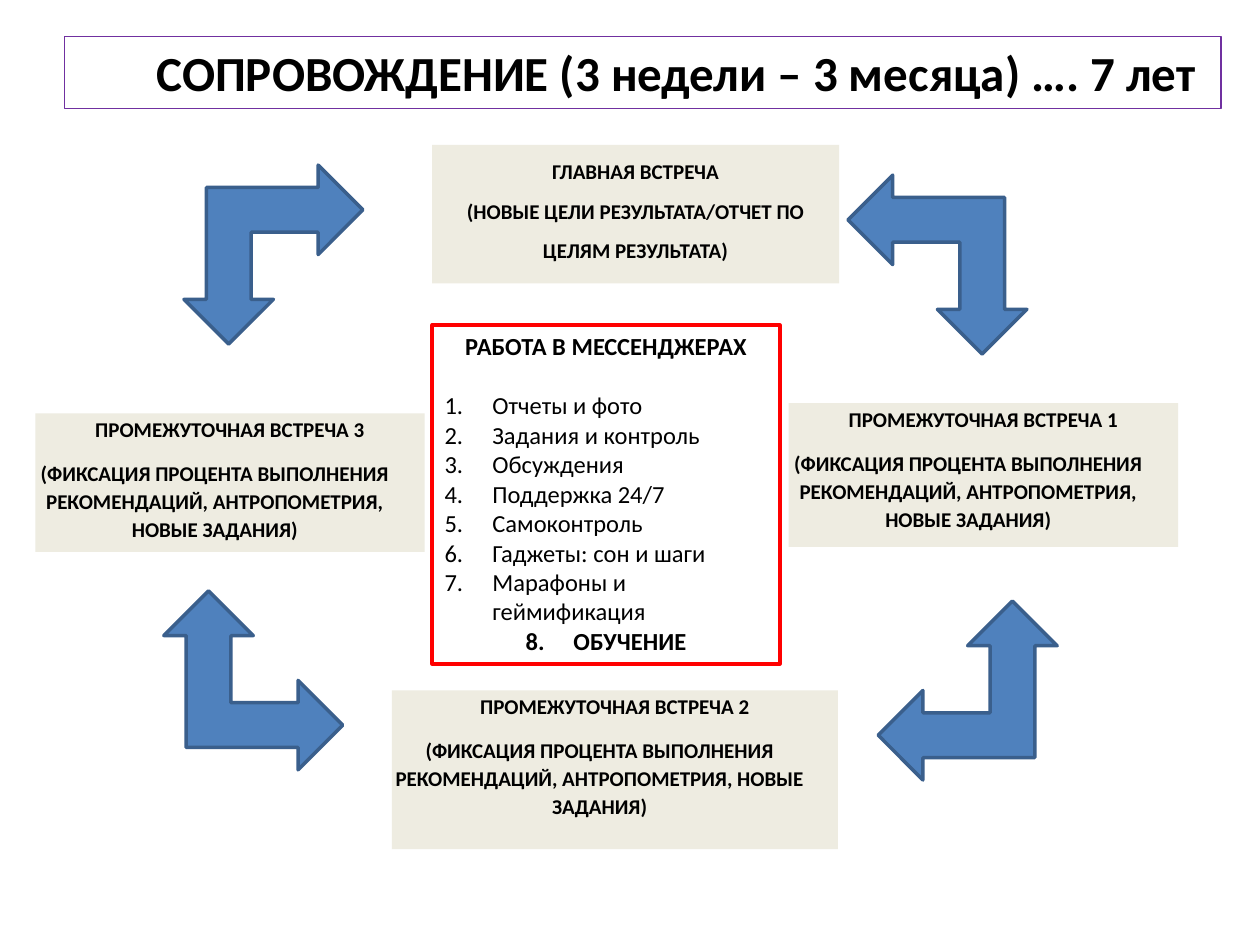
from dataclasses import dataclass

import pptx
import pptx.dml.color
import pptx.enum.shapes
import pptx.enum.text
import pptx.oxml.ns
import pptx.util
from lxml import etree

WIDTH, HEIGHT = pptx.util.Inches(10), pptx.util.Inches(7.5)
FONT = "Calibri"
COLORS = {
    "text": "000000",
    "frame": "7030A0",
    "card": "EEECE1",
    "arrow": "4F81BD",
    "edge": "3A5F8C",
    "alert": "FF0000",
}
ALIGN = pptx.enum.text.PP_ALIGN
KIND = pptx.enum.shapes.MSO_SHAPE


@dataclass
class Box:
    """Left, top, width and height in percent of the slide."""
    left: float
    top: float
    width: float
    height: float

    def place(self) -> tuple[int, int, int, int]:
        return (int(WIDTH * self.left / 100), int(HEIGHT * self.top / 100),
                int(WIDTH * self.width / 100), int(HEIGHT * self.height / 100))


@dataclass
class Card:
    box: Box
    head: str
    body: str
    spacing: float = 1.12
    gap: float = 9.1
    shift: float = 0.24  # right indent of the body, inches


@dataclass
class Arrow:
    left: float
    top: float
    turn: int


TASK = "(ФИКСАЦИЯ ПРОЦЕНТА ВЫПОЛНЕНИЯ РЕКОМЕНДАЦИЙ, АНТРОПОМЕТРИЯ, НОВЫЕ ЗАДАНИЯ)"
STEP = "ПРОМЕЖУТОЧНАЯ ВСТРЕЧА"
TITLE = "СОПРОВОЖДЕНИЕ (3 недели – 3 месяца) …. 7 лет"
TITLE_BOX = Box(5.1, 3.87, 91.8, 7.6)
CARDS = [
    Card(Box(34.3, 15.33, 32.3, 14.67), "ГЛАВНАЯ ВСТРЕЧА",
         "(НОВЫЕ ЦЕЛИ РЕЗУЛЬТАТА/ОТЧЕТ ПО ЦЕЛЯМ РЕЗУЛЬТАТА)", 1.56, 0, 0),
    Card(Box(62.6, 42.67, 30.9, 15.2), f"{STEP} 1", TASK),
    Card(Box(31.1, 73.07, 35.4, 16.8), f"{STEP} 2", TASK),
    Card(Box(2.8, 43.73, 30.9, 14.67), f"{STEP} 3", TASK),
]
ARROWS = [
    Arrow(67.3, 18.53, 270),
    Arrow(69.7, 63.6, 0),
    Arrow(13, 62.53, 90),
    Arrow(14.6, 17.47, 180),
]
ARROW_SIZE = 14.2
CHAT_BOX = Box(34.3, 34.4, 27.6, 35.87)
CHAT_HEAD = "РАБОТА В МЕССЕНДЖЕРАХ"
CHAT_ITEMS = ["Отчеты и фото", "Задания и контроль", "Обсуждения", "Поддержка 24/7",
              "Самоконтроль", "Гаджеты: сон и шаги", "Марафоны и геймификация"]
CHAT_LAST = "ОБУЧЕНИЕ"


def color(name: str) -> pptx.dml.color.RGBColor:
    return pptx.dml.color.RGBColor.from_string(COLORS[name])


def add_run(par, text: str, size: float, bold: bool = True) -> None:
    run = par.add_run()
    run.text = text
    font = run.font
    font.name, font.size, font.bold = FONT, pptx.util.Pt(size), bold
    font.color.rgb = color("text")


def set_line(shape, name: str, width: float) -> None:
    shape.line.color.rgb = color(name)
    shape.line.width = pptx.util.Pt(width)


def add_shape(slide, kind, box: Box, fill: str | None = None):
    shape = slide.shapes.add_shape(kind, *box.place())
    shape.shadow.inherit = False
    if fill:
        shape.fill.solid()
        shape.fill.fore_color.rgb = color(fill)
    else:
        shape.fill.background()
    return shape


def set_frame(shape, inset: float | None = None):
    frame = shape.text_frame
    frame.word_wrap = True
    frame.vertical_anchor = pptx.enum.text.MSO_ANCHOR.TOP
    if inset is not None:
        frame.margin_left = frame.margin_right = pptx.util.Inches(inset)
        frame.margin_top = frame.margin_bottom = pptx.util.Inches(inset)
    return frame


def set_indent(par, **sides: float) -> None:
    """Set marL, marR or indent of a paragraph, in inches."""
    props = par._p.get_or_add_pPr()
    for side, inches in sides.items():
        props.set(side, str(int(pptx.util.Inches(inches))))


def draw_title(slide) -> None:
    title = slide.shapes.title
    title.left, title.top, title.width, title.height = TITLE_BOX.place()
    set_line(title, "frame", 0.75)
    frame = set_frame(title, 0.05)
    frame.auto_size = pptx.enum.text.MSO_AUTO_SIZE.NONE
    frame.margin_left, frame.margin_right = pptx.util.Inches(0.73), 0
    par = frame.paragraphs[0]
    par.alignment = ALIGN.LEFT
    add_run(par, TITLE, 28)


def draw_card(slide, card: Card) -> None:
    shape = add_shape(slide, KIND.RECTANGLE, card.box, "card")
    shape.line.fill.background()
    frame = set_frame(shape, 0)
    head, body = frame.paragraphs[0], frame.add_paragraph()
    for par, text in ((head, card.head), (body, card.body)):
        par.alignment = ALIGN.CENTER
        par.line_spacing = card.spacing
        add_run(par, text, 12)
    head.space_after = pptx.util.Pt(card.gap)
    set_indent(body, marR=card.shift)


def draw_arrow(slide, arrow: Arrow) -> None:
    box = Box(arrow.left, arrow.top, ARROW_SIZE, ARROW_SIZE * WIDTH / HEIGHT)
    shape = add_shape(slide, KIND.LEFT_UP_ARROW, box, "arrow")
    set_line(shape, "edge", 2)
    shape.rotation = arrow.turn


def add_item(frame, text: str, last: bool = False):
    par = frame.add_paragraph()
    par.alignment = ALIGN.CENTER if last else ALIGN.LEFT
    set_indent(par, marL=0.38, indent=-0.38)
    etree.SubElement(par._p.get_or_add_pPr(), pptx.oxml.ns.qn("a:buAutoNum"),
                     type="arabicPeriod")
    add_run(par, text, 14, last)
    return par


def draw_chat(slide) -> None:
    shape = add_shape(slide, KIND.RECTANGLE, CHAT_BOX)
    set_line(shape, "alert", 2)
    frame = set_frame(shape)
    head = frame.paragraphs[0]
    head.alignment = ALIGN.CENTER
    add_run(head, CHAT_HEAD, 14)
    head.space_after = pptx.util.Pt(17)
    for text in CHAT_ITEMS:
        add_item(frame, text)
    add_item(frame, CHAT_LAST, last=True)


def main() -> None:
    deck = pptx.Presentation()
    deck.slide_width, deck.slide_height = WIDTH, HEIGHT
    slide = deck.slides.add_slide(deck.slide_layouts[5])
    draw_title(slide)
    for card in CARDS:
        draw_card(slide, card)
    for arrow in ARROWS:
        draw_arrow(slide, arrow)
    draw_chat(slide)
    deck.save("out.pptx")


if __name__ == "__main__":
    main()
